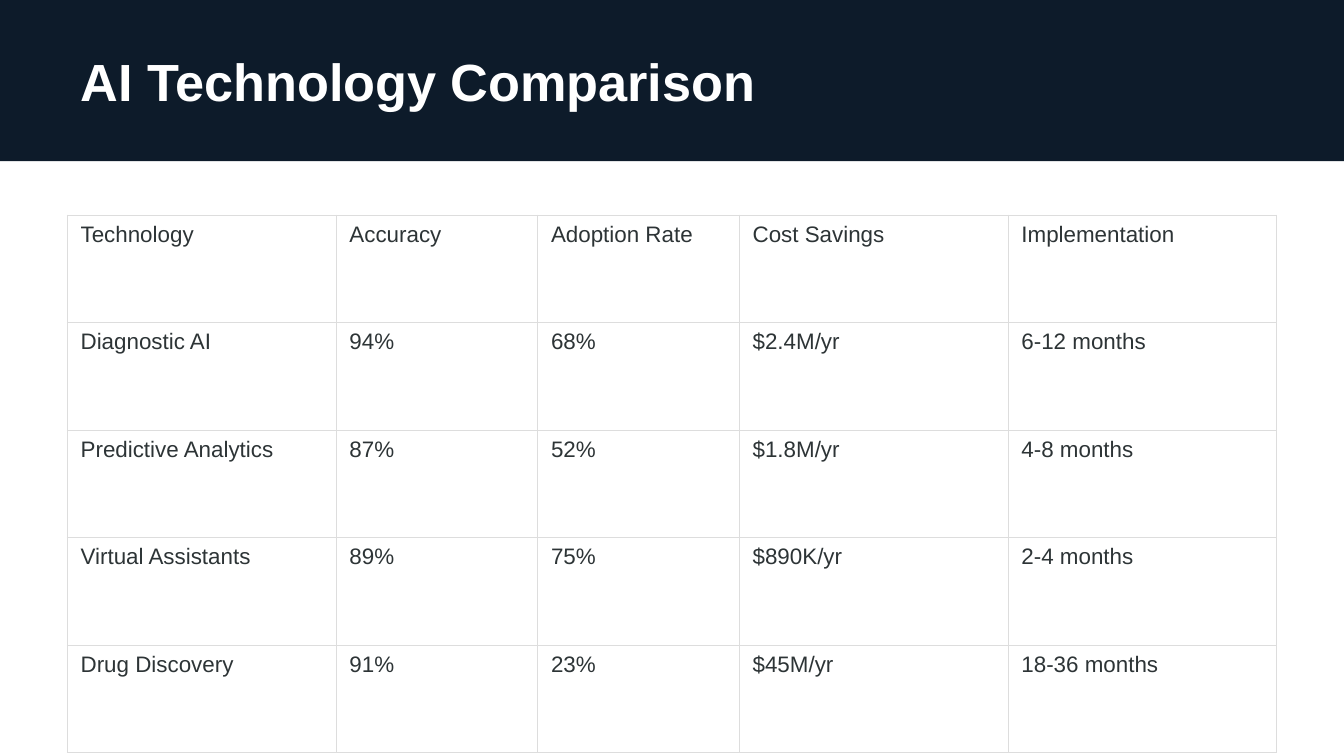
"""Build a slide that compares AI technologies in a table."""
from lxml.etree import SubElement
from pptx import Presentation
from pptx.dml.color import RGBColor
from pptx.enum.shapes import MSO_SHAPE
from pptx.enum.text import MSO_ANCHOR, MSO_AUTO_SIZE, PP_ALIGN
from pptx.oxml.ns import qn
from pptx.util import Pt


def color(code):
    return RGBColor.from_string(code)


def style(para, size, code, bold=False):
    font = para.runs[0].font
    font.name, font.size, font.bold = "Arial", Pt(size), bold
    font.color.rgb = color(code)


deck = Presentation()
deck.slide_width, deck.slide_height = Pt(720), Pt(405)
slide = deck.slides.add_slide(deck.slide_layouts[5])

band = slide.shapes.add_shape(MSO_SHAPE.RECTANGLE, 0, 0, Pt(720), Pt(86.4))
band.shadow.inherit = False
band.fill.solid()
band.fill.fore_color.rgb = color("0D1B2A")
band.line.fill.background()

title = slide.shapes.title
title.element.addprevious(band.element)
title.left, title.top, title.width, title.height = Pt(36), Pt(21.6), Pt(648), Pt(43.2)
frame = title.text_frame
frame.text = "AI Technology Comparison"
frame.auto_size = MSO_AUTO_SIZE.NONE
frame.vertical_anchor = MSO_ANCHOR.MIDDLE
frame.paragraphs[0].alignment = PP_ALIGN.LEFT
style(frame.paragraphs[0], 28, "FFFFFF", True)

rows = [
    ("Technology", "Accuracy", "Adoption Rate", "Cost Savings", "Implementation"),
    ("Diagnostic AI", "94%", "68%", "$2.4M/yr", "6-12 months"),
    ("Predictive Analytics", "87%", "52%", "$1.8M/yr", "4-8 months"),
    ("Virtual Assistants", "89%", "75%", "$890K/yr", "2-4 months"),
    ("Drug Discovery", "91%", "23%", "$45M/yr", "18-36 months"),
]
widths = [144, 108, 108, 144, 144]
table = slide.shapes.add_table(
    len(rows), len(widths), Pt(36), Pt(115.2), Pt(sum(widths)), Pt(288)
).table
table.first_row = table.horz_banding = False
for column, width in zip(table.columns, widths):
    column.width = Pt(width)

for r, row in enumerate(rows):
    table.rows[r].height = Pt(57.6)
    for c, text in enumerate(row):
        cell = table.cell(r, c)
        cell.text = text
        style(cell.text_frame.paragraphs[0], 12, "2D3436")
        props = cell._tc.get_or_add_tcPr()
        for side in ("lnL", "lnR", "lnT", "lnB"):
            line = SubElement(props, qn(f"a:{side}"), w=str(Pt(0.5)))
            fill = SubElement(line, qn("a:solidFill"))
            SubElement(fill, qn("a:srgbClr"), val="DDDDDD")
        cell.fill.background()

deck.save("out.pptx")
